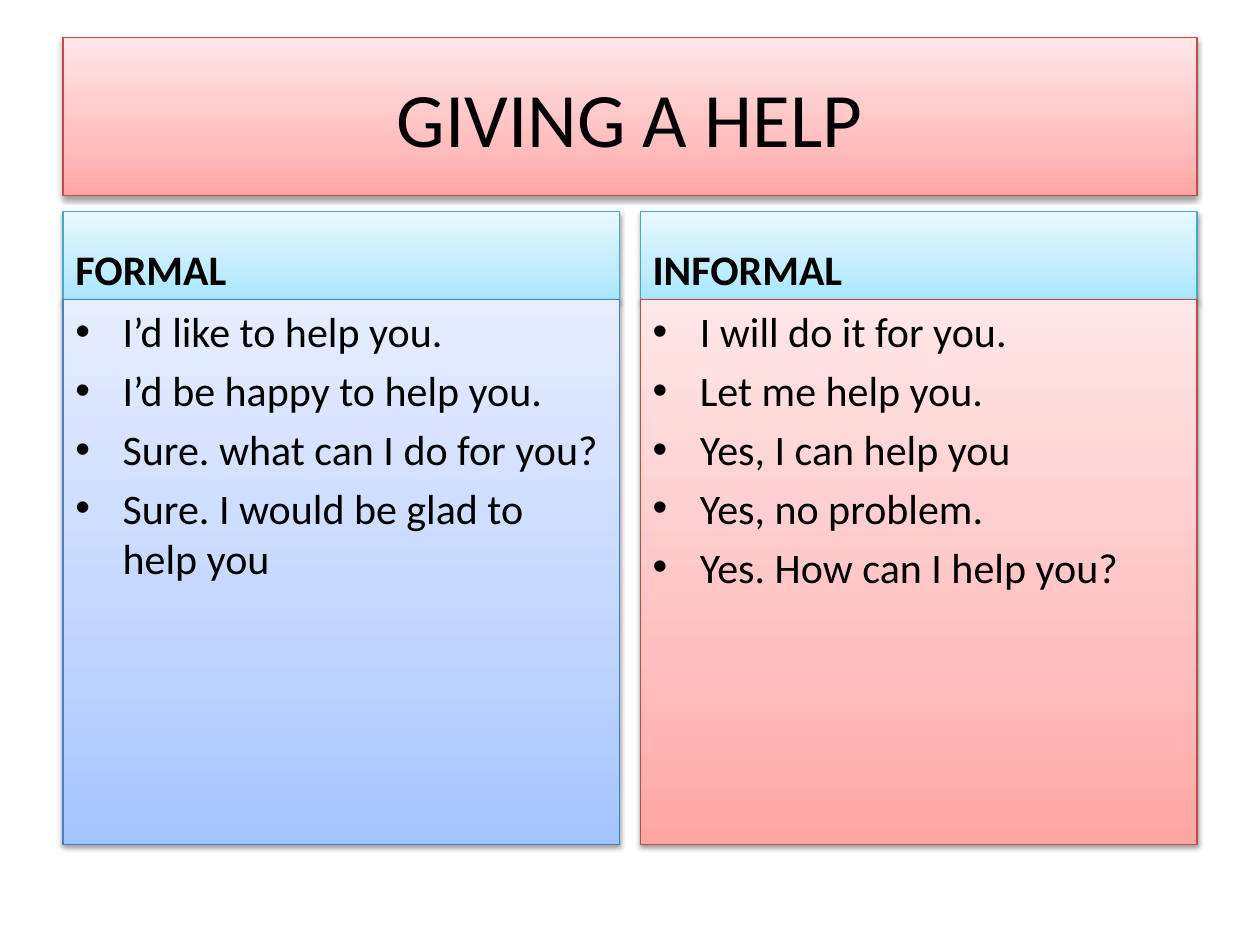
from dataclasses import dataclass

from lxml.etree import SubElement
from pptx import Presentation
from pptx.dml.color import RGBColor
from pptx.enum.shapes import MSO_SHAPE
from pptx.enum.text import MSO_ANCHOR, PP_ALIGN
from pptx.oxml.ns import qn
from pptx.shapes.autoshape import Shape
from pptx.slide import Slide
from pptx.util import Pt

FONT = "Calibri"
TEXT_COLOUR = "000000"
MARGIN = 36
COLUMN_WIDTH = 318.2
COLUMN_STEP = 329.8
HEADING_TOP, HEADING_HEIGHT = 120.9, 50.4
LIST_HEIGHT = 311.2
BULLET_INDENT = 27


@dataclass(frozen=True)
class Palette:
    stops: tuple[tuple[int, str], ...]
    line: str


@dataclass(frozen=True)
class Box:
    left: float
    top: float
    width: float
    height: float
    palette: Palette


@dataclass(frozen=True)
class Column:
    heading: str
    phrases: tuple[str, ...]
    palette: Palette


RED = Palette(((0, "FFA6A5"), (35, "FFC0BF"), (100, "FFE7E7")), "BF4C48")
AQUA = Palette(((0, "A7E6FF"), (35, "C1EDFF"), (100, "E7F8FF")), "46AAC5")
BLUE = Palette(((0, "A4C4FF"), (35, "BFD4FF"), (100, "E6EEFF")), "4B7EBC")

COLUMNS = (
    Column("FORMAL", (
        "I’d like to help you.",
        "I’d be happy to help you.",
        "Sure. what can I do for you?",
        "Sure. I would be glad to help you",
    ), BLUE),
    Column("INFORMAL", (
        "I will do it for you.",
        "Let me help you.",
        "Yes, I can help you",
        "Yes, no problem.",
        "Yes. How can I help you?",
    ), RED),
)


def colour(value: str) -> RGBColor:
    return RGBColor.from_string(value)


def apply_gradient(shape: Shape, palette: Palette) -> None:
    """Fill with every palette stop, running from the bottom edge to the top."""
    shape.fill.gradient()
    shape.fill.gradient_angle = 90
    stop_list = shape._element.spPr.find(qn("a:gradFill")).find(qn("a:gsLst"))
    for stop in list(stop_list):
        stop_list.remove(stop)
    for position, value in palette.stops:
        stop = SubElement(stop_list, qn("a:gs"), pos=str(position * 1000))
        SubElement(stop, qn("a:srgbClr"), val=value)


def apply_shadow(shape: Shape) -> None:
    """Cast a soft black shadow straight down."""
    shape.shadow.inherit = False
    effects = shape._element.spPr.find(qn("a:effectLst"))
    shadow = SubElement(
        effects, qn("a:outerShdw"), blurRad=str(Pt(3.1)), dist=str(Pt(1.6)),
        dir="5400000", rotWithShape="0",
    )
    black = SubElement(shadow, qn("a:srgbClr"), val="000000")
    SubElement(black, qn("a:alpha"), val="38000")


def add_box(slide: Slide, box: Box, lines: tuple[str, ...], size: float,
            anchor: MSO_ANCHOR, alignment: PP_ALIGN = PP_ALIGN.LEFT,
            bold: bool = False, bulleted: bool = False) -> None:
    shape = slide.shapes.add_shape(
        MSO_SHAPE.RECTANGLE, Pt(box.left), Pt(box.top), Pt(box.width), Pt(box.height)
    )
    apply_gradient(shape, box.palette)
    shape.line.color.rgb = colour(box.palette.line)
    shape.line.width = Pt(0.75)
    apply_shadow(shape)

    text_frame = shape.text_frame
    text_frame.word_wrap = True
    text_frame.vertical_anchor = anchor
    text_frame.text = "\n".join(lines)
    for index, paragraph in enumerate(text_frame.paragraphs):
        paragraph.alignment = alignment
        if bulleted:
            add_bullet(paragraph)
        if index:
            paragraph.space_before = Pt(size * 0.2)
        for run in paragraph.runs:
            run.font.name = FONT
            run.font.size = Pt(size)
            run.font.bold = bold
            run.font.color.rgb = colour(TEXT_COLOUR)


def add_bullet(paragraph) -> None:
    properties = paragraph._p.get_or_add_pPr()
    properties.set("marL", str(Pt(BULLET_INDENT)))
    properties.set("indent", str(-Pt(BULLET_INDENT)))
    SubElement(properties, qn("a:buFont"), typeface="Arial")
    SubElement(properties, qn("a:buChar"), char="•")


def main() -> None:
    presentation = Presentation()
    presentation.slide_width = Pt(720)
    presentation.slide_height = Pt(540)
    slide = presentation.slides.add_slide(presentation.slide_layouts[6])

    title_box = Box(MARGIN, 21.6, 648, 90, RED)
    add_box(slide, title_box, ("GIVING A HELP",), 44, MSO_ANCHOR.MIDDLE, PP_ALIGN.CENTER)

    for index, column in enumerate(COLUMNS):
        left = MARGIN + index * COLUMN_STEP
        heading_box = Box(left, HEADING_TOP, COLUMN_WIDTH, HEADING_HEIGHT, AQUA)
        list_box = Box(left, HEADING_TOP + HEADING_HEIGHT, COLUMN_WIDTH, LIST_HEIGHT,
                       column.palette)
        add_box(slide, heading_box, (column.heading,), 24, MSO_ANCHOR.BOTTOM, bold=True)
        add_box(slide, list_box, column.phrases, 24, MSO_ANCHOR.TOP, bulleted=True)

    presentation.save("out.pptx")


if __name__ == "__main__":
    main()
